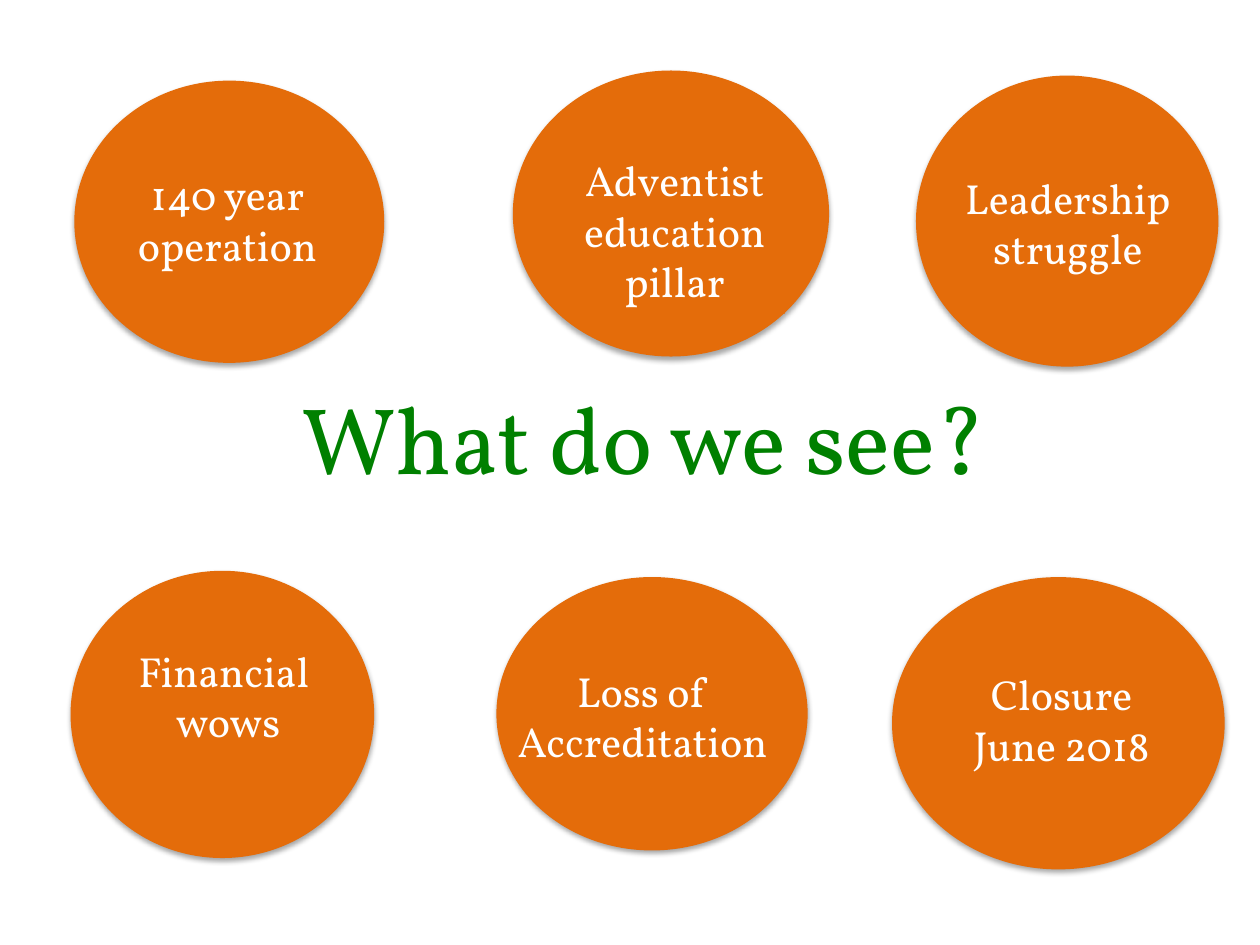
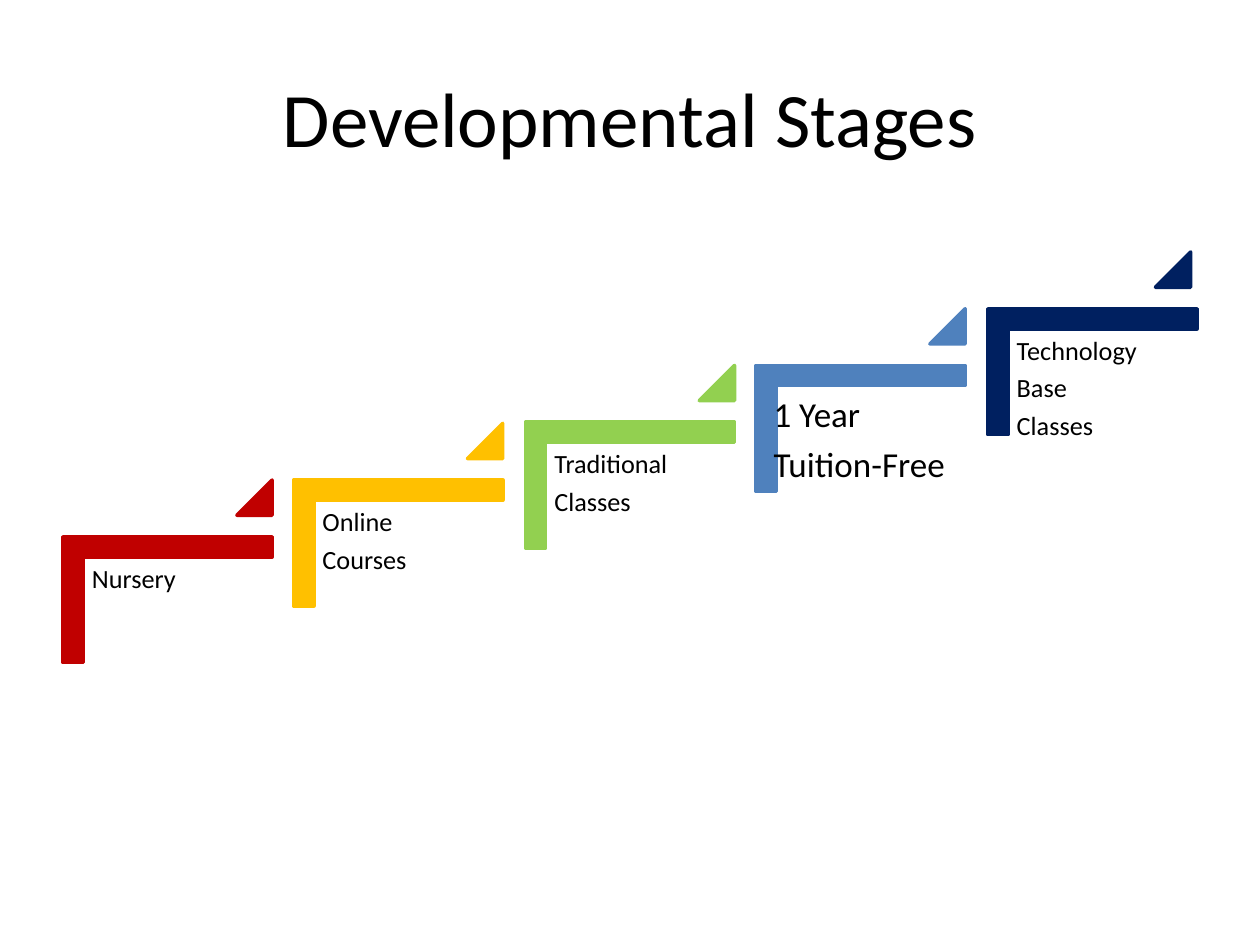
from dataclasses import dataclass

import lxml.etree
import pptx
import pptx.dml.color
import pptx.enum.shapes
import pptx.enum.text
import pptx.oxml.ns
import pptx.util

# Shared measures, colours and fonts
PX = 9144  # EMU in one px, 100 px to the inch
ORANGE, GREEN, WHITE, BLACK = "E46C0A", "008000", "FFFFFF", "000000"
SERIF, SANS = "Vollkorn", "Calibri"
SHAPE = pptx.enum.shapes.MSO_SHAPE
ALIGN = pptx.enum.text.PP_ALIGN
ANCHOR = pptx.enum.text.MSO_ANCHOR

Box = tuple[int, int, int, int]  # left, top, width, height in px


@dataclass(frozen=True)
class TextStyle:
    font: str
    size: int
    color: str
    align: ALIGN = ALIGN.LEFT
    anchor: ANCHOR = ANCHOR.TOP
    inset_x: int = 10
    inset_y: int = 5
    line_spacing: float | None = None
    after: float = 0  # share of the text size


@dataclass(frozen=True)
class Bubble:
    circle: Box
    caption: Box
    lines: tuple[str, ...]
    filled: bool = False


@dataclass(frozen=True)
class Stage:
    lines: tuple[str, ...]
    color: str
    size: int = 15
    inset: int = 6
    label_shift: int = 0
    label_width: int = 150
    flag_shift: int = 0


BUBBLES = (
    Bubble((59, 64, 246, 224), (85, 129, 191, 91), ("140 year operation",)),
    Bubble((407, 56, 251, 227), (448, 118, 175, 131),
           ("Adventist education pillar",), True),
    Bubble((727, 60, 240, 231), (747, 132, 201, 91),
           ("Leadership struggle",), True),
    Bubble((56, 453, 241, 228), (28, 507, 306, 91), ("Financial ", "wows")),
    Bubble((394, 458, 247, 217), (389, 523, 242, 91),
           ("Loss of Accreditation",)),
    Bubble((708, 458, 264, 232), (730, 526, 225, 91),
           ("Closure", "June 2018"), True),
)

STAGES = (
    Stage(("Nursery",), "C00000"),
    Stage(("Online", "Courses"), "FFC000"),
    Stage(("Traditional", "Classes"), "92D050"),
    Stage(("1 Year", "Tuition-Free"), "4F81BD", size=20, inset=8,
          label_shift=-11, label_width=171),
    Stage(("Technology", "Base", "Classes"), "002060", flag_shift=-5),
)
STAGE_LEFT, STAGE_TOP = 83, 393
STAGE_RUN, STAGE_RISE = 183.4, 45.3


def rgb(color: str) -> pptx.dml.color.RGBColor:
    return pptx.dml.color.RGBColor.from_string(color)


def emu(box: Box) -> list[int]:
    return [length * PX for length in box]


def apply(target, values: dict) -> None:
    for name, value in values.items():
        setattr(target, name, value)


def paint(shape, color: str) -> None:
    shape.fill.solid()
    shape.fill.fore_color.rgb = rgb(color)


def add_figure(slide, kind: SHAPE, box: Box, color: str, line_width: int = 0):
    figure = slide.shapes.add_shape(kind, *emu(box))
    figure.shadow.inherit = False
    paint(figure, color)
    if line_width:
        figure.line.color.rgb = rgb(color)
        figure.line.width = pptx.util.Pt(line_width)
    else:
        figure.line.fill.background()
    return figure


def add_soft_shadow(figure) -> None:
    qn = pptx.oxml.ns.qn
    effects = figure._element.spPr.find(qn("a:effectLst"))
    shadow = lxml.etree.SubElement(
        effects, qn("a:outerShdw"), blurRad="39370", dist="22860",
        dir="5400000", rotWithShape="0")
    tint = lxml.etree.SubElement(shadow, qn("a:srgbClr"), val=BLACK)
    lxml.etree.SubElement(tint, qn("a:alpha"), val="35000")


def add_text(slide, box: Box, lines: tuple[str, ...], style: TextStyle):
    text_box = slide.shapes.add_textbox(*emu(box))
    frame = text_box.text_frame
    apply(frame, {
        "word_wrap": True,
        "vertical_anchor": style.anchor,
        "margin_left": style.inset_x * PX,
        "margin_right": style.inset_x * PX,
        "margin_top": style.inset_y * PX,
        "margin_bottom": style.inset_y * PX,
    })
    for index, line in enumerate(lines):
        paragraph = frame.add_paragraph() if index else frame.paragraphs[0]
        apply(paragraph, {
            "alignment": style.align,
            "line_spacing": style.line_spacing,
            "space_after": pptx.util.Pt(style.size * style.after),
        })
        run = paragraph.add_run()
        run.text = line
        apply(run.font, {"name": style.font, "size": pptx.util.Pt(style.size)})
        run.font.color.rgb = rgb(style.color)
    return text_box


def add_title(slide, box: Box, title: str, font: str, size: int,
              color: str) -> None:
    add_text(slide, box, (title,),
             TextStyle(font, size, color, ALIGN.CENTER, ANCHOR.MIDDLE))


def add_bubble(slide, bubble: Bubble) -> None:
    add_soft_shadow(add_figure(slide, SHAPE.OVAL, bubble.circle, ORANGE))
    caption = add_text(slide, bubble.caption, bubble.lines,
                       TextStyle(SERIF, 24, WHITE, ALIGN.CENTER))
    if bubble.filled:
        paint(caption, ORANGE)


def add_stage(slide, step: int, stage: Stage) -> None:
    left = round(STAGE_LEFT + step * STAGE_RUN)
    top = round(STAGE_TOP - step * STAGE_RISE)

    # Stair bracket, lying on its side
    bracket = add_figure(slide, SHAPE.CORNER, (left, top, 100, 166),
                         stage.color, 2)
    bracket.rotation = 90
    for index in range(2):
        bracket.adjustments[index] = 0.161

    # Label under the bracket
    style = TextStyle(SANS, stage.size, BLACK, inset_x=stage.inset,
                      inset_y=stage.inset, line_spacing=0.9, after=0.35)
    label = (left - 16 + stage.label_shift, top + 50, stage.label_width, 131)
    add_text(slide, label, stage.lines, style)

    # Corner flag above its right end
    flag = add_figure(slide, SHAPE.ISOSCELES_TRIANGLE,
                      (left + 105 + stage.flag_shift, top - 12, 28, 28),
                      stage.color, 2)
    flag.adjustments[0] = 1


def main() -> None:
    deck = pptx.Presentation()
    apply(deck, {"slide_width": 1000 * PX, "slide_height": 750 * PX})
    blank = deck.slide_layouts[6]

    # Slide 1: six observations around the question
    observations = deck.slides.add_slide(blank)
    for bubble in BUBBLES:
        add_bubble(observations, bubble)
    add_title(observations, (38, 260, 946, 173), "What do we see?",
              SERIF, 54, GREEN)

    # Slide 2: rising stages
    staircase = deck.slides.add_slide(blank)
    for step, stage in enumerate(STAGES):
        add_stage(staircase, step, stage)
    add_title(staircase, (50, 30, 900, 125), "Developmental Stages",
              SANS, 44, BLACK)

    deck.save("out.pptx")


if __name__ == "__main__":
    main()
